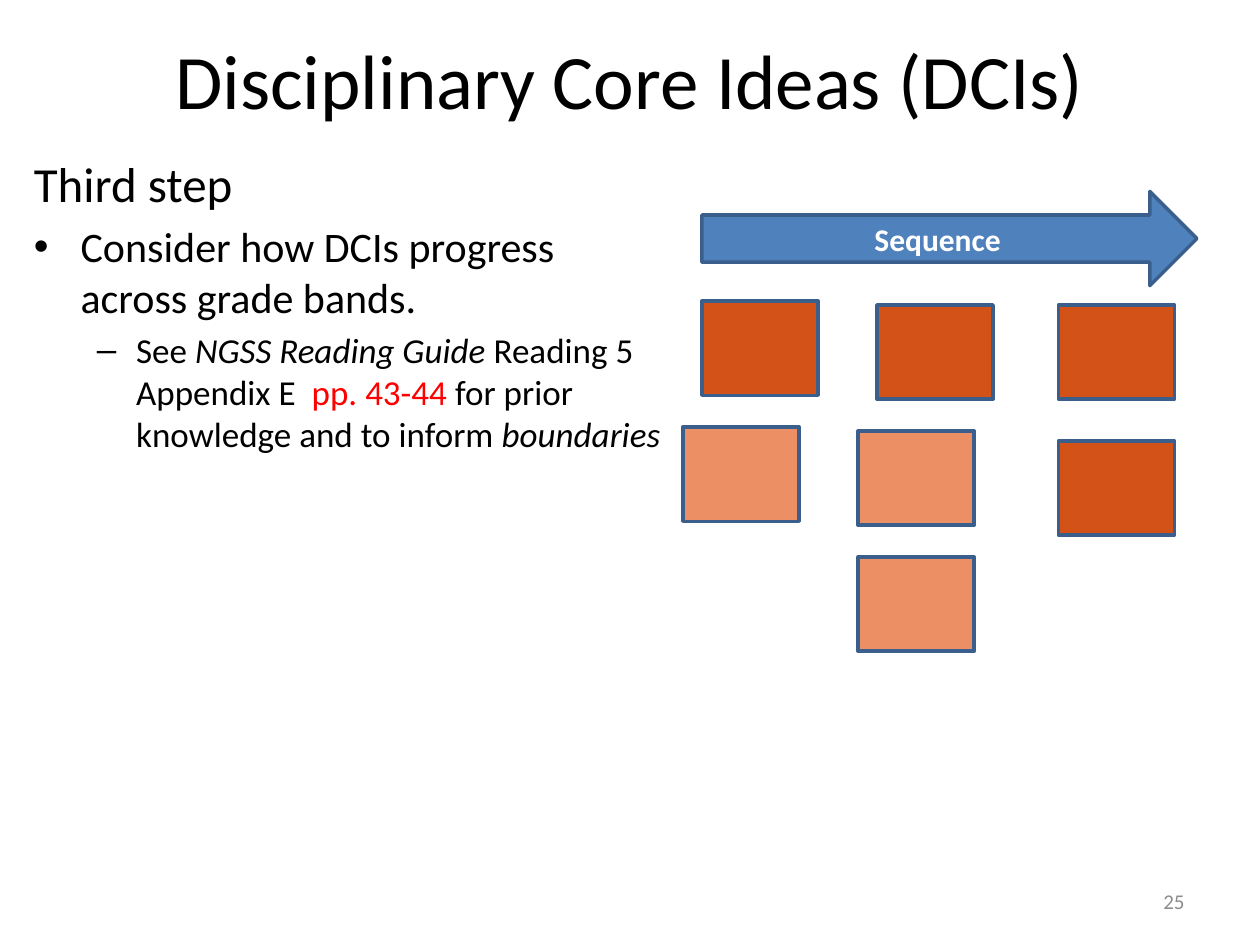
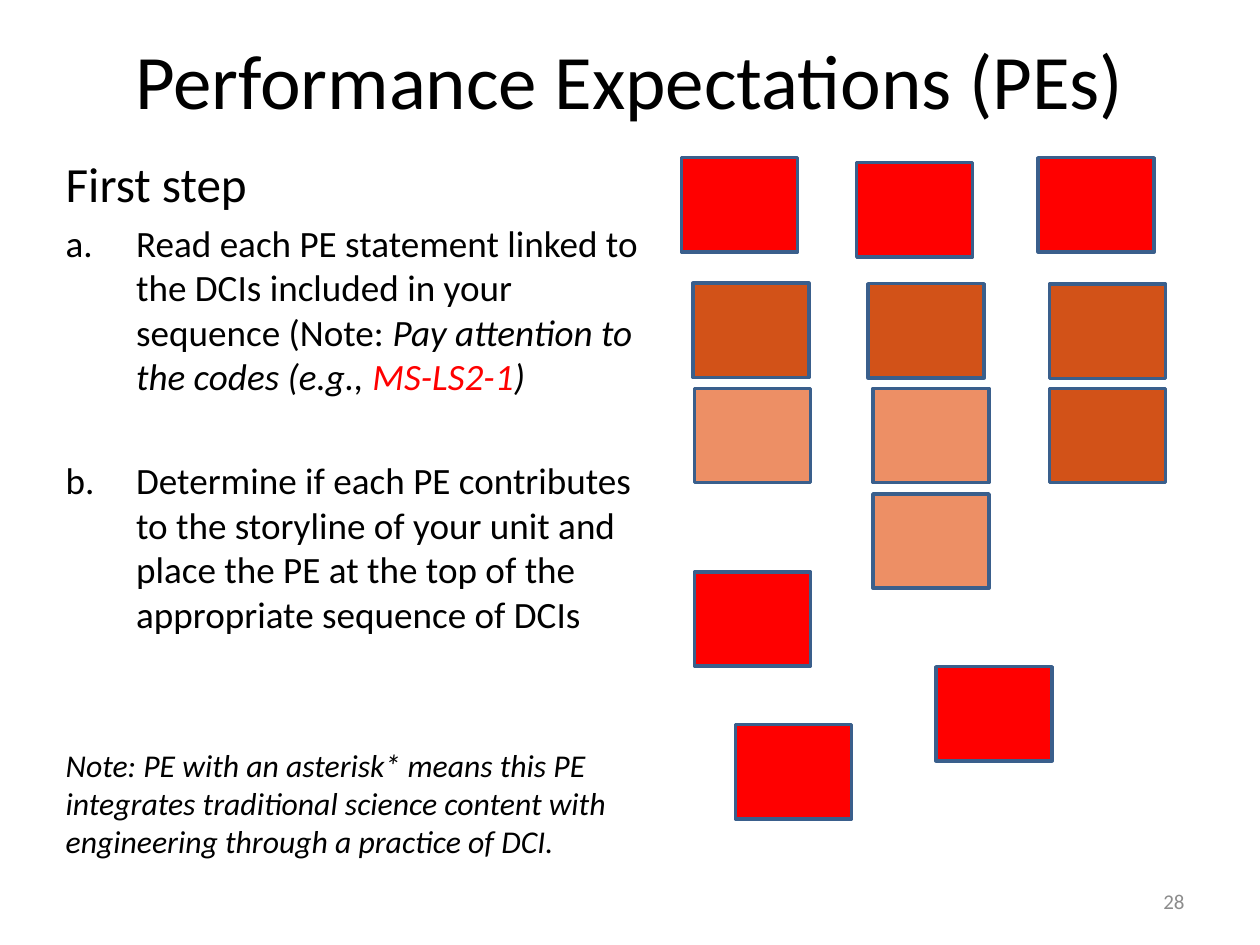
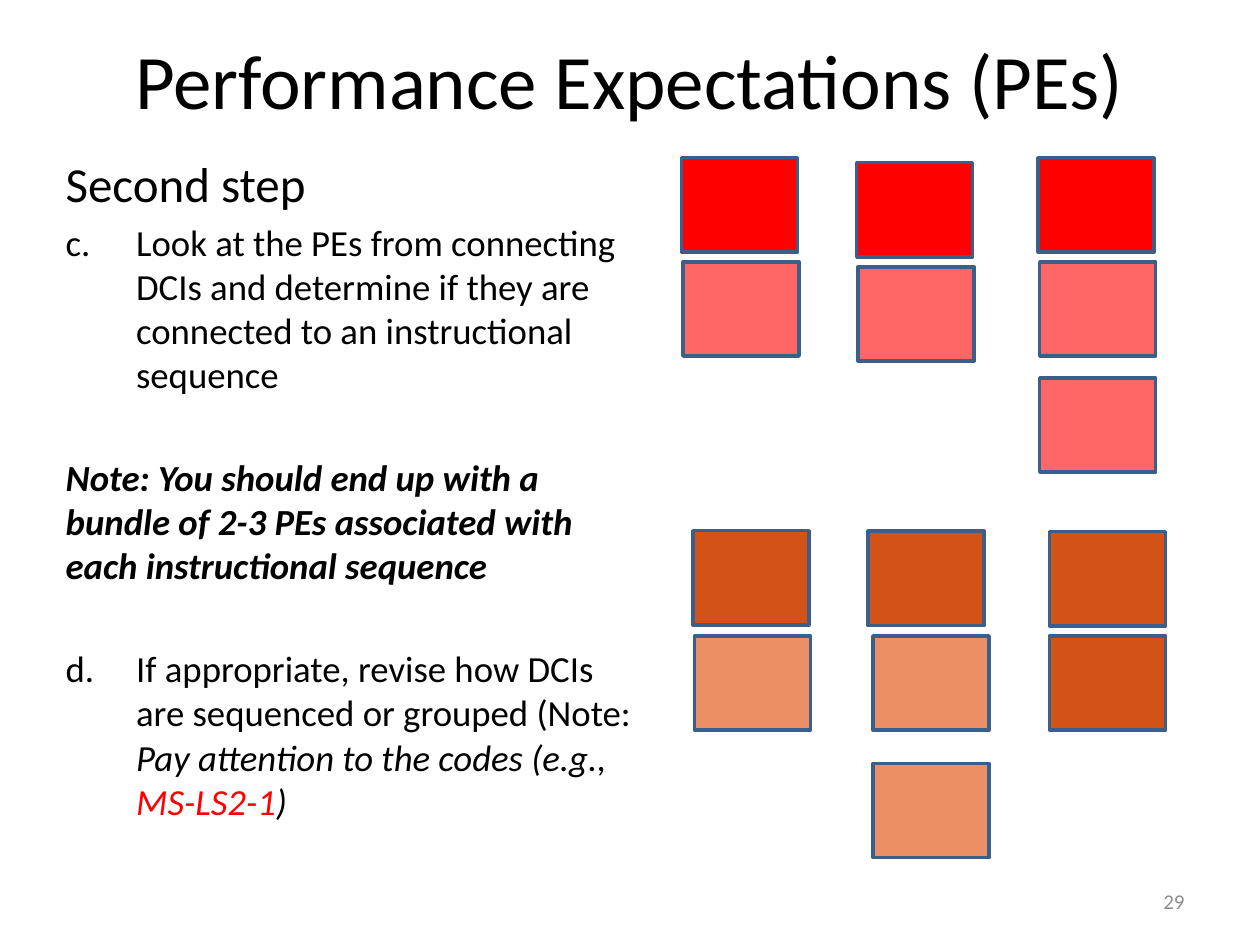
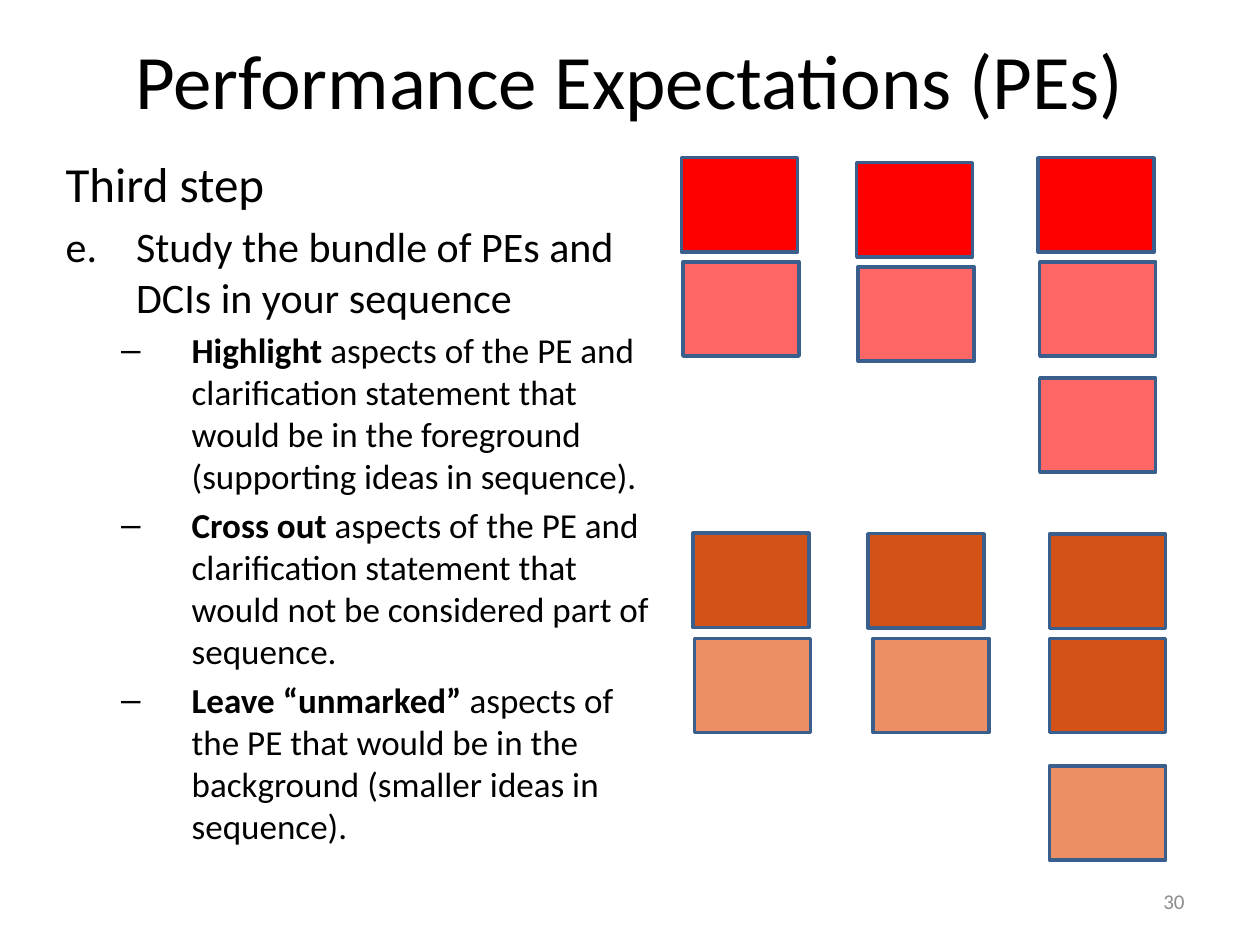
import lxml.etree
import pptx
import pptx.dml.color
import pptx.enum.shapes
import pptx.enum.text
import pptx.oxml.ns
import pptx.util

Cm = pptx.util.Cm
Pt = pptx.util.Pt
PP_ALIGN = pptx.enum.text.PP_ALIGN
MIDDLE = pptx.enum.text.MSO_ANCHOR.MIDDLE
SHAPES = pptx.enum.shapes.MSO_SHAPE

COLORS = {
    "text": "000000",
    "code": "FF0000",
    "number": "8C8C8C",
    "label": "FFFFFF",
    "outline": "3A5F8C",
    "sequence": "4F81BD",
    "idea": "D25218",
    "linked_idea": "ED8F65",
    "expectation": "FF0000",
    "linked_expectation": "FF6666",
}
FORMATS = {
    "plain": {},
    "italic": {"italic": True},
    "bold": {"bold": True},
    "strong_note": {"bold": True, "italic": True},
}
TILE = (2.34, 1.9)
TITLE_BOX = (1.27, 0, 22.86, 3.18)
NUMBER_BOX = (18.21, 17.65, 5.92, 1.02)
SEQUENCE_BOX = (14.15, 3.86, 9.98, 1.9)

LEVELS = {
    "flush": (0, 0, 0),
    "bullet": (0, 0.94, 0.94),
    "dash": (1, 2.06, 0.79),
    "letter": (0, 1.42, 1.42),
    "wide_dash": (1, 2.54, 1.42),
}

pe_tiles = [("expectation", 13.74, 3.18), ("expectation", 17.27, 3.28), ("expectation", 20.93, 3.18)]
linked_pe_tiles = [("linked_expectation", x + 0.03, y + 2.1) for _, x, y in pe_tiles]
linked_pe_tiles.append(("linked_expectation", 20.96, 7.62))
unplaced_pe_tiles = [("expectation", 14.83, 14.61), ("expectation", 18.87, 13.44), ("expectation", 14, 11.53)]
idea_grid = [
    ("idea", 21.16, 2.12),
    ("idea", 21.16, 0.02),
    ("idea", 13.97, 0),
    ("idea", 17.5, 0.01),
    ("linked_idea", 14, 2.12),
    ("linked_idea", 17.6, 2.12),
]
first_ideas, second_ideas, third_ideas = [
    [(kind, x, top + y) for kind, x, y in idea_grid] + [("linked_idea", last_x, top + drop)]
    for top, last_x, drop in [(5.71, 17.6, 4.25), (10.7, 17.6, 4.69), (10.75, 21.16, 4.69)]
]
codes_hint = [
    ("Pay attention to the codes (e.g., ", "italic", "text"),
    ("MS-LS2-1", "italic", "code"),
    (")", "italic", "text"),
]

pages = [
    {
        "title": "Disciplinary Core Ideas (DCIs)",
        "number": "25",
        "body": (0.43, 2.97, 13.34, 14.61),
        "steps": [
            ("flush", None, 28, 5.6, [("Third step", "plain", "text")]),
            ("bullet", "•", 24, 4.8, [("Consider how DCIs progress across grade bands.", "plain", "text")]),
            ("dash", "–", 20, 4, [
                ("See ", "plain", "text"),
                ("NGSS Reading Guide ", "italic", "text"),
                ("Reading 5 Appendix E  ", "plain", "text"),
                ("pp. 43-44 ", "plain", "code"),
                ("for prior knowledge and to inform ", "plain", "text"),
                ("boundaries", "italic", "text"),
            ]),
        ],
        "tiles": [
            ("idea", 21.34, 8.89),
            ("idea", 21.34, 6.15),
            ("idea", 14.15, 6.07),
            ("idea", 17.68, 6.15),
            ("linked_idea", 13.77, 8.61),
            ("linked_idea", 17.3, 8.69),
            ("linked_idea", 17.3, 11.23),
        ],
        "sequence": "Sequence",
    },
    {
        "title": "Performance Expectations (PEs)",
        "number": "28",
        "body": (1.07, 2.97, 12.5, 15.44),
        "steps": [
            ("flush", None, 28.1, 5.6, [("First step", "plain", "text")]),
            ("letter", 1, 21.2, 4.2, [
                ("Read each PE statement linked to the DCIs included in your sequence (Note: ", "plain", "text"),
                *codes_hint,
            ]),
            ("letter", 1, 21.2, 34, [
                ("Determine if each PE contributes to the storyline of your unit and place the PE "
                 "at the top of the appropriate sequence of DCIs", "plain", "text"),
            ]),
            ("flush", None, 18.1, 63, [
                ("Note: PE with an asterisk* means this PE integrates traditional science content "
                 "with engineering through a practice of DCI.", "italic", "text"),
            ]),
        ],
        "tiles": first_ideas + unplaced_pe_tiles + pe_tiles,
    },
    {
        "title": "Performance Expectations (PEs)",
        "number": "29",
        "body": (1.07, 2.97, 12.07, 15.44),
        "steps": [
            ("flush", None, 28, 5.6, [("Second step", "plain", "text")]),
            ("letter", 3, 21, 4.2, [
                ("Look at the PEs from connecting DCIs and determine if they are connected "
                 "to an instructional sequence", "plain", "text"),
            ]),
            ("flush", None, 21, 33.6, [
                ("Note: You should end up with a bundle of 2-3 PEs associated with each "
                 "instructional sequence", "strong_note", "text"),
            ]),
            ("letter", 4, 21, 33.6, [
                ("If appropriate, revise how DCIs are sequenced or grouped (Note: ", "plain", "text"),
                *codes_hint,
            ]),
        ],
        "tiles": second_ideas + pe_tiles + linked_pe_tiles,
    },
    {
        "title": "Performance Expectations (PEs)",
        "number": "30",
        "body": (1.07, 2.97, 12.5, 15.44),
        "steps": [
            ("flush", None, 28, 5.6, [("Third step", "plain", "text")]),
            ("letter", 5, 24, 4.8, [("Study the bundle of PEs and DCIs in your sequence", "plain", "text")]),
            ("wide_dash", "–", 20, 4, [
                ("Highlight", "bold", "text"),
                (" aspects of the PE and clarification statement that would be in the foreground "
                 "(supporting ideas in sequence).", "plain", "text"),
            ]),
            ("wide_dash", "–", 20, 4, [
                ("Cross out", "bold", "text"),
                (" aspects of the PE and clarification statement that would not be considered "
                 "part of sequence.", "plain", "text"),
            ]),
            ("wide_dash", "–", 20, 4, [
                ("Leave “unmarked” ", "bold", "text"),
                ("aspects of the PE that would be in the background (smaller ideas in sequence).",
                 "plain", "text"),
            ]),
        ],
        "tiles": third_ideas + pe_tiles + linked_pe_tiles,
    },
]


def write_run(paragraph, text, size, color, style="plain"):
    run = paragraph.add_run()
    run.text = text
    for attribute, value in {"name": "Calibri", "size": Pt(size), **FORMATS[style]}.items():
        setattr(run.font, attribute, value)
    run.font.color.rgb = pptx.dml.color.RGBColor.from_string(COLORS[color])


def add_block(slide, preset, color, box):
    block = slide.shapes.add_shape(preset, *map(Cm, box))
    block.shadow.inherit = False
    block.fill.solid()
    block.fill.fore_color.rgb = pptx.dml.color.RGBColor.from_string(COLORS[color])
    block.line.color.rgb = pptx.dml.color.RGBColor.from_string(COLORS["outline"])
    block.line.width = Pt(2)
    return block


deck = pptx.Presentation()
deck.slide_width, deck.slide_height = Cm(25.4), Cm(19.05)

for page in pages:
    slide = deck.slides.add_slide(deck.slide_layouts[1])
    title, body = slide.placeholders
    for holder, box in [(title, TITLE_BOX), (body, page["body"])]:
        for side, length in zip(("left", "top", "width", "height"), box):
            setattr(holder, side, Cm(length))
        holder.text_frame.word_wrap = True
        holder.text_frame.auto_size = pptx.enum.text.MSO_AUTO_SIZE.NONE

    title.text_frame.vertical_anchor = MIDDLE
    heading = title.text_frame.paragraphs[0]
    heading.alignment = PP_ALIGN.CENTER
    write_run(heading, page["title"], 44, "text")

    for index, (level, marker, size, gap, runs) in enumerate(page["steps"]):
        step = body.text_frame.add_paragraph() if index else body.text_frame.paragraphs[0]
        depth, indent, hanging = LEVELS[level]
        step.level = depth
        step.space_before = Pt(gap)
        properties = step._p.get_or_add_pPr()
        properties.set("marL", str(Cm(indent)))
        properties.set("indent", str(-Cm(hanging)))
        if marker is None:
            tag, settings = "a:buNone", {}
        elif isinstance(marker, int):
            tag, settings = "a:buAutoNum", {"type": "alphaLcPeriod"}
            if marker > 1:
                settings["startAt"] = str(marker)
        else:
            tag, settings = "a:buChar", {"char": marker}
        lxml.etree.SubElement(properties, pptx.oxml.ns.qn(tag), settings)
        for text, style, color in runs:
            write_run(step, text, size, color, style)

    for kind, x, y in page["tiles"]:
        add_block(slide, SHAPES.RECTANGLE, kind, (x, y, *TILE))

    if "sequence" in page:
        sequence = add_block(slide, SHAPES.RIGHT_ARROW, "sequence", SEQUENCE_BOX)
        sequence.text_frame.vertical_anchor = MIDDLE
        label = sequence.text_frame.paragraphs[0]
        label.alignment = PP_ALIGN.CENTER
        write_run(label, page["sequence"], 18, "label", "bold")

    page_number = slide.shapes.add_textbox(*map(Cm, NUMBER_BOX)).text_frame
    page_number.word_wrap = True
    page_number.vertical_anchor = MIDDLE
    page_number.paragraphs[0].alignment = PP_ALIGN.RIGHT
    write_run(page_number.paragraphs[0], page["number"], 12, "number")

deck.save("out.pptx")
